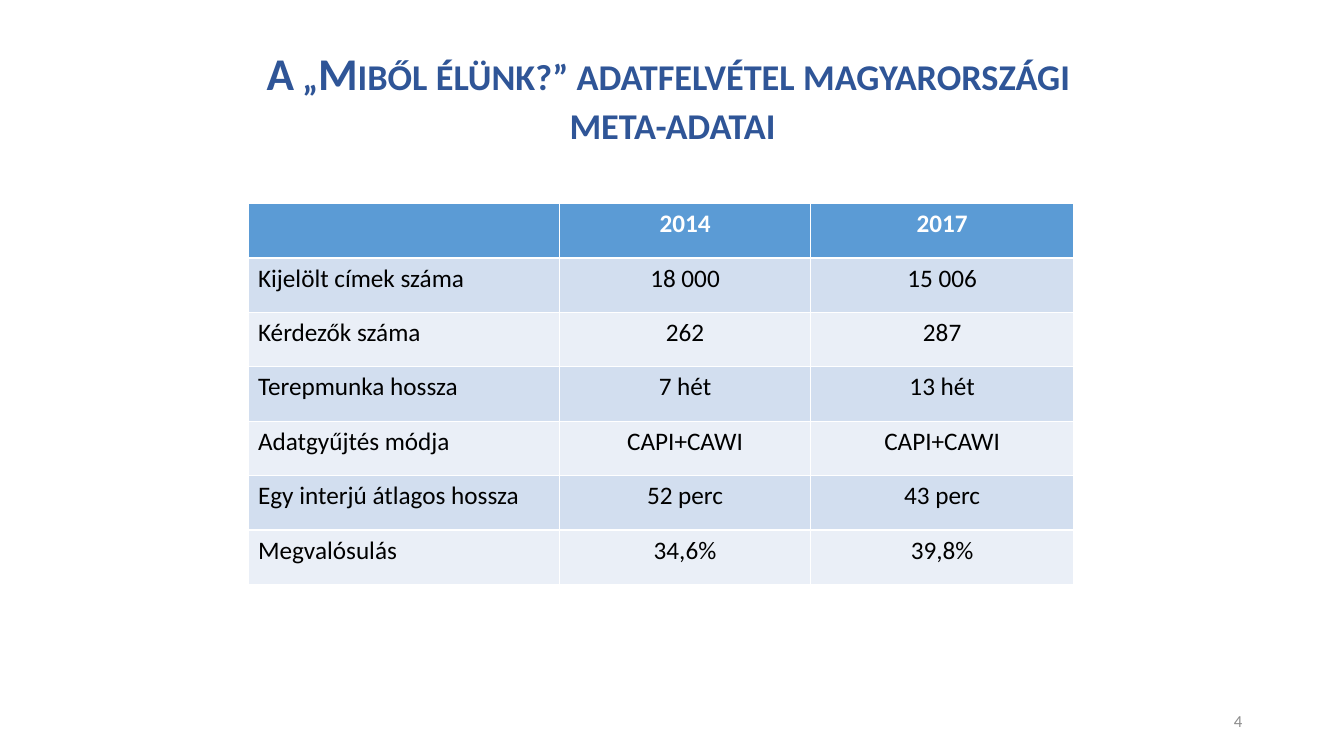
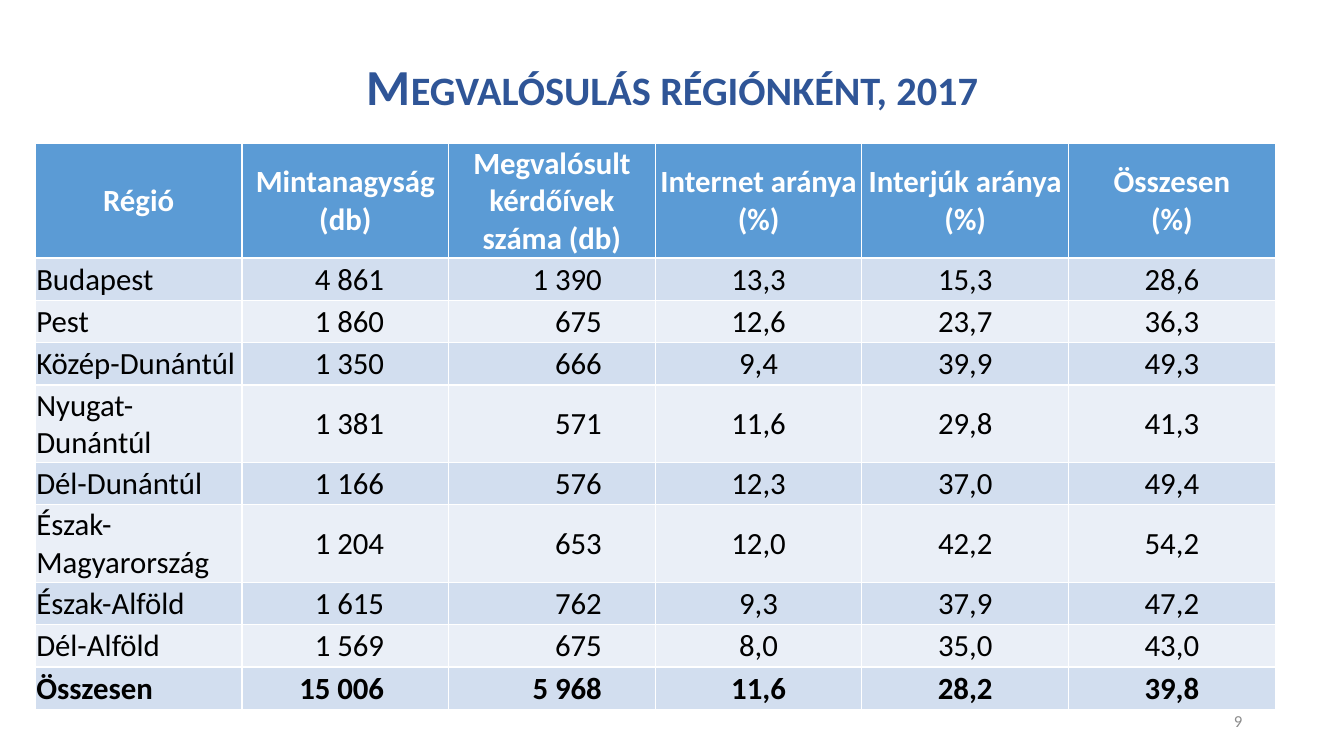
"""Builds two slides with survey tables under a shared title and number style."""
from dataclasses import dataclass, field

from pptx import Presentation
from pptx.dml.color import RGBColor
from pptx.enum.text import MSO_ANCHOR, MSO_AUTO_SIZE, PP_ALIGN
from pptx.slide import Slide
from pptx.util import Inches, Pt

LEFT, CENTER, RIGHT = PP_ALIGN.LEFT, PP_ALIGN.CENTER, PP_ALIGN.RIGHT
TOP, MIDDLE = MSO_ANCHOR.TOP, MSO_ANCHOR.MIDDLE
NO_AUTOFIT = MSO_AUTO_SIZE.NONE

FONT = "Calibri"
NAVY = RGBColor(0x2F, 0x55, 0x97)
BLUE = RGBColor(0x5B, 0x9B, 0xD5)
BANDS = (RGBColor(0xEA, 0xEF, 0xF7), RGBColor(0xD2, 0xDE, 0xEF))
GREY = RGBColor(0x8C, 0x8C, 0x8C)
WHITE = RGBColor(0xFF, 0xFF, 0xFF)
BLACK = RGBColor(0x00, 0x00, 0x00)
TITLE_ONLY = 5


@dataclass(frozen=True)
class TableSpec:
    left: float
    top: float
    widths: list[float]
    heights: list[float]
    rows: list[tuple[str, ...]]
    size: float
    anchor: MSO_ANCHOR = TOP
    margins: tuple[float, float, float, float] = (0.1, 0.05, 0.1, 0.05)
    number_insets: dict[int, float] = field(default_factory=dict)
    total_row: bool = False


@dataclass(frozen=True)
class SlideSpec:
    title: str
    title_top: float
    title_height: float
    title_size: float
    number: int
    table: TableSpec


def style(p, size: float, color: RGBColor, align: PP_ALIGN, bold: bool = False) -> None:
    p.alignment = align
    p.font.name = FONT
    p.font.size = Pt(size)
    p.font.bold = bold
    p.font.color.rgb = color


def add_title(s: Slide, spec: SlideSpec) -> None:
    sp = s.shapes.title
    sp.left, sp.top = Inches(0.92), Inches(spec.title_top)
    sp.width, sp.height = Inches(11.5), Inches(spec.title_height)
    tf = sp.text_frame
    tf.auto_size = NO_AUTOFIT
    tf.vertical_anchor = MIDDLE
    p = tf.paragraphs[0]
    p.text = spec.title
    p.line_spacing = 0.9
    style(p, spec.title_size, NAVY, CENTER, bold=True)
    for r in p.runs:
        r._r.get_or_add_rPr().set("cap", "small")


def add_number(s: Slide, number: int) -> None:
    sp = s.shapes.add_textbox(Inches(9.42), Inches(6.95), Inches(3), Inches(0.4))
    tf = sp.text_frame
    tf.word_wrap = True
    tf.vertical_anchor = MIDDLE
    p = tf.paragraphs[0]
    p.text = str(number)
    style(p, 12, GREY, RIGHT)


def add_table(s: Slide, spec: TableSpec) -> None:
    table = s.shapes.add_table(
        len(spec.rows), len(spec.widths), Inches(spec.left), Inches(spec.top),
        Inches(sum(spec.widths)), Inches(sum(spec.heights))).table
    for column, width in zip(table.columns, spec.widths):
        column.width = Inches(width)
    for row, height in zip(table.rows, spec.heights):
        row.height = Inches(height)
    for i, values in enumerate(spec.rows):
        header = i == 0
        bold = header or (spec.total_row and i == len(spec.rows) - 1)
        for j, value in enumerate(values):
            cell = table.cell(i, j)
            cell.fill.solid()
            cell.fill.fore_color.rgb = BLUE if header else BANDS[i % 2]
            cell.vertical_anchor = spec.anchor
            left, top, right, bottom = spec.margins
            align = LEFT if j == 0 and not header else CENTER
            if j in spec.number_insets and not header:
                align, right = RIGHT, spec.number_insets[j]
            cell.margin_left, cell.margin_top = Inches(left), Inches(top)
            cell.margin_right, cell.margin_bottom = Inches(right), Inches(bottom)
            cell.text = value
            for p in cell.text_frame.paragraphs:
                style(p, spec.size, WHITE if header else BLACK, align, bold)


SLIDES = [
    SlideSpec(
        "A „Miből élünk?” adatfelvétel magyarországi \vmeta-adatai",
        0.5, 0.99, 32.4, 4,
        TableSpec(2.46, 2.02, [3.09, 2.49, 2.61], [0.54] * 7, [
            ("", "2014", "2017"),
            ("Kijelölt címek száma", "18 000", "15 006"),
            ("Kérdezők száma", "262", "287"),
            ("Terepmunka hossza", "7 hét", "13 hét"),
            ("Adatgyűjtés módja", "CAPI+CAWI", "CAPI+CAWI"),
            ("Egy interjú átlagos hossza", "52 perc", "43 perc"),
            ("Megvalósulás", "34,6%", "39,8%"),
        ], 18)),
    SlideSpec(
        "Megvalósulás régiónként, 2017", 0.4, 0.96, 36, 9,
        TableSpec(
            0.35, 1.42, [2.05] * 6,
            [1.14, 0.42, 0.42, 0.42, 0.77, 0.42, 0.77, 0.42, 0.42, 0.42], [
                ("Régió", "Mintanagyság\n(db)", "Megvalósult kérdőívek száma (db)",
                 "Internet aránya (%)", "Interjúk aránya\n(%)", "Összesen\n(%)"),
                ("Budapest", "4 861", "1 390", "13,3", "15,3", "28,6"),
                ("Pest", "1 860", "675", "12,6", "23,7", "36,3"),
                ("Közép-Dunántúl", "1 350", "666", "9,4", "39,9", "49,3"),
                ("Nyugat-Dunántúl", "1 381", "571", "11,6", "29,8", "41,3"),
                ("Dél-Dunántúl", "1 166", "576", "12,3", "37,0", "49,4"),
                ("Észak-Magyarország", "1 204", "653", "12,0", "42,2", "54,2"),
                ("Észak-Alföld", "1 615", "762", "9,3", "37,9", "47,2"),
                ("Dél-Alföld", "1 569", "675", "8,0", "35,0", "43,0"),
                ("Összesen", "15 006", "5 968", "11,6", "28,2", "39,8"),
            ], 22, MIDDLE, (0.01, 0.01, 0.01, 0), {1: 0.64, 2: 0.53}, total_row=True)),
]


def main() -> None:
    prs = Presentation()
    prs.slide_width, prs.slide_height = Inches(13.33), Inches(7.5)
    for spec in SLIDES:
        s = prs.slides.add_slide(prs.slide_layouts[TITLE_ONLY])
        add_title(s, spec)
        add_number(s, spec.number)
        add_table(s, spec.table)
    prs.save("out.pptx")


if __name__ == "__main__":
    main()
